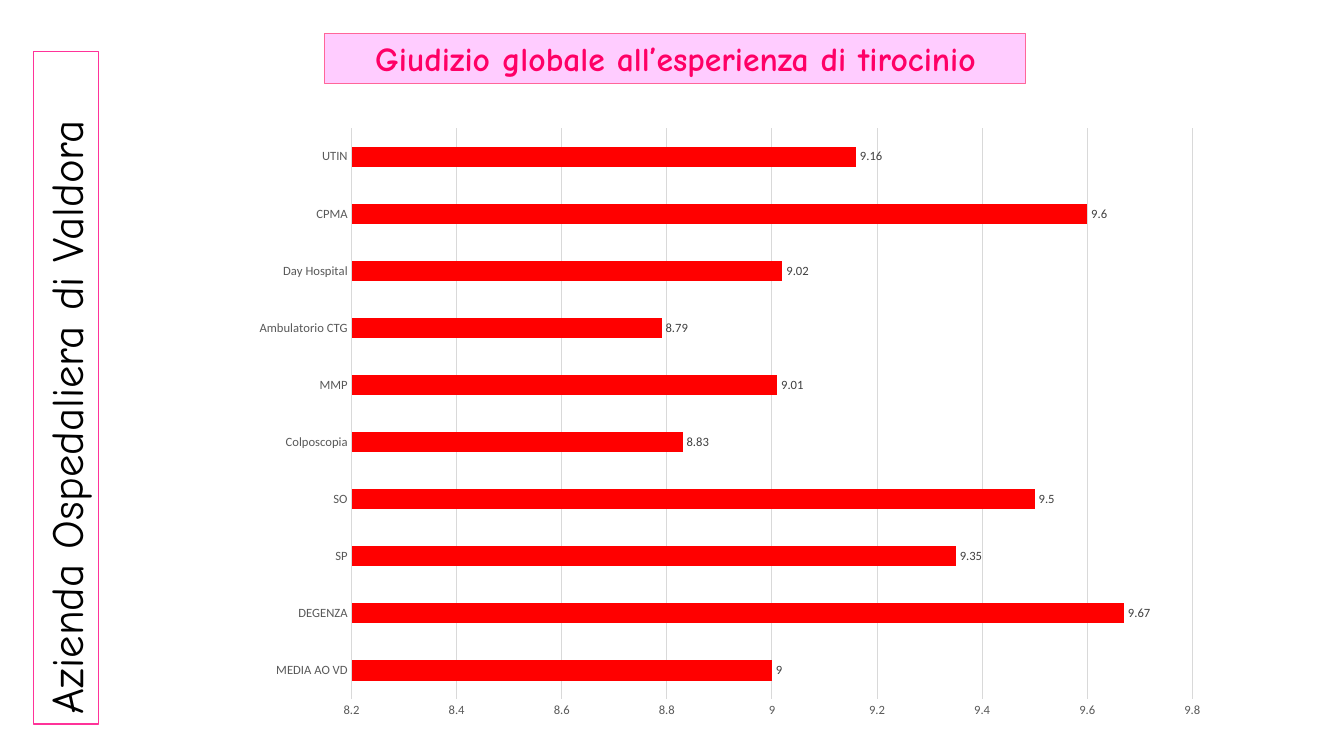
from dataclasses import dataclass

from pptx import Presentation
from pptx.chart.data import CategoryChartData
from pptx.dml.color import RGBColor
from pptx.enum.chart import XL_CHART_TYPE, XL_LABEL_POSITION, XL_TICK_MARK
from pptx.enum.shapes import MSO_SHAPE
from pptx.enum.text import MSO_ANCHOR, MSO_AUTO_SIZE, PP_ALIGN
from pptx.util import Pt

RECT = MSO_SHAPE.RECTANGLE
BAR = XL_CHART_TYPE.BAR_CLUSTERED
OUT_END = XL_LABEL_POSITION.OUTSIDE_END
NO_TICK = XL_TICK_MARK.NONE
LEFT, CENTER = PP_ALIGN.LEFT, PP_ALIGN.CENTER
TOP = MSO_ANCHOR.TOP
GROW = MSO_AUTO_SIZE.SHAPE_TO_FIT_TEXT

SCALE = 914400 / 100.8


@dataclass(frozen=True)
class Theme:
    head_font: str = "Comic Neue"
    body_font: str = "Calibri"
    title_size: int = 24
    side_size: int = 32
    chart_size: int = 10
    tick_size: int = 9
    line_width: float = 0.75
    title_fill: str = "FFCCFF"
    title_line: str = "FF6699"
    title_ink: str = "FF0066"
    side_line: str = "FF3399"
    white: str = "FFFFFF"
    black: str = "000000"
    bar: str = "FF0000"
    grid: str = "D9D9D9"
    tick: str = "595959"
    label: str = "404040"


THEME = Theme()

SCORES = {
    "MEDIA AO VD": 9,
    "DEGENZA": 9.67,
    "SP": 9.35,
    "SO": 9.5,
    "Colposcopia": 8.83,
    "MMP": 9.01,
    "Ambulatorio CTG": 8.79,
    "Day Hospital": 9.02,
    "CPMA": 9.6,
    "UTIN": 9.16,
}


def px(n):
    return round(n * SCALE)


def rgb(color):
    return RGBColor.from_string(color)


def style(font, name, size, color, bold=False):
    font.name, font.size, font.bold = name, Pt(size), bold
    font.color.rgb = rgb(color)


def stroke(line, color):
    line.color.rgb = rgb(color)
    line.width = Pt(THEME.line_width)


def panel(slide, box, fill, edge):
    """Add a framed box that grows with its text."""
    shape = slide.shapes.add_shape(RECT, *map(px, box))
    shape.shadow.inherit = False
    shape.fill.solid()
    shape.fill.fore_color.rgb = rgb(fill)
    stroke(shape.line, edge)
    frame = shape.text_frame
    frame.auto_size = GROW
    frame.vertical_anchor = TOP
    return shape


def write(frame, text, align, size, color, bold=False):
    para = frame.paragraphs[0]
    para.alignment = align
    run = para.add_run()
    run.text = text
    style(run.font, THEME.head_font, size, color, bold)


def title(slide, box):
    shape = panel(slide, box, THEME.title_fill, THEME.title_line)
    shape.text_frame.word_wrap = True
    write(shape.text_frame, "Giudizio globale all’esperienza di tirocinio",
          CENTER, THEME.title_size, THEME.title_ink, True)


def side(slide, box):
    """Add the upright label; box is the area it covers once turned."""
    x, y, w, h = box
    turned = (x + (w - h) / 2, y + (h - w) / 2, h, w)
    shape = panel(slide, turned, THEME.white, THEME.side_line)
    shape.rotation = 270
    shape.text_frame.word_wrap = False
    write(shape.text_frame, "Azienda Ospedaliera di Valdora",
          LEFT, THEME.side_size, THEME.black)


def axes(chart):
    for axis in (chart.category_axis, chart.value_axis):
        axis.major_tick_mark = axis.minor_tick_mark = NO_TICK
        style(axis.tick_labels.font, THEME.body_font, THEME.tick_size,
              THEME.tick)
    chart.category_axis.has_major_gridlines = False
    stroke(chart.category_axis.format.line, THEME.grid)
    value = chart.value_axis
    value.minimum_scale, value.maximum_scale = 8.2, 9.8
    value.major_unit = 0.2
    value.has_major_gridlines = True
    stroke(value.major_gridlines.format.line, THEME.grid)
    value.format.line.fill.background()


def bars(plot):
    plot.gap_width = 182
    plot.vary_by_categories = False
    series = plot.series[0]
    series.invert_if_negative = False
    series.format.fill.solid()
    series.format.fill.fore_color.rgb = rgb(THEME.bar)
    labels = series.data_labels
    labels.show_value = True
    labels.position = OUT_END
    style(labels.font, THEME.body_font, THEME.tick_size, THEME.label)


def scores(slide, box):
    data = CategoryChartData()
    data.categories = list(SCORES)
    data.add_series("Series 1", list(SCORES.values()))
    chart = slide.shapes.add_chart(BAR, *map(px, box), data).chart
    chart.has_title = chart.has_legend = False
    style(chart.font, THEME.body_font, THEME.chart_size, THEME.black)
    axes(chart)
    bars(chart.plots[0])


def main():
    deck = Presentation()
    deck.slide_width, deck.slide_height = px(1344), px(756)
    slide = deck.slides.add_slide(deck.slide_layouts[6])
    title(slide, (325, 33, 701, 51))
    side(slide, (34, 51, 65, 673))
    scores(slide, (240, 116, 980, 614))
    deck.save("out.pptx")


if __name__ == "__main__":
    main()
